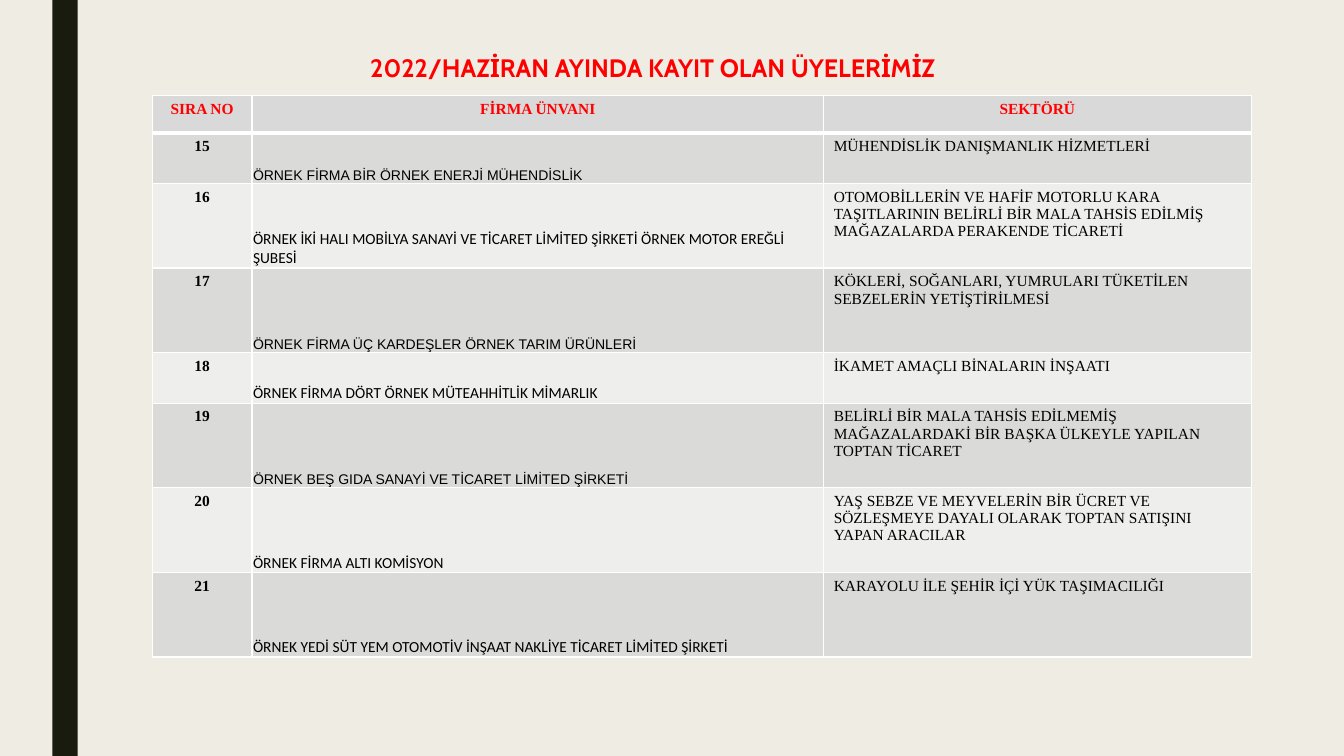
from dataclasses import dataclass

from lxml.etree import SubElement
from pptx import Presentation
from pptx.dml.color import RGBColor
from pptx.enum.shapes import MSO_SHAPE as Shape
from pptx.enum.text import MSO_ANCHOR as Anchor, PP_ALIGN as Align
from pptx.oxml.ns import qn
from pptx.util import Inches, Pt


@dataclass(frozen=True)
class Theme:
    background: str = "EFEDE3"
    stripe: str = "191B0E"
    accent: str = "FF0000"
    ink: str = "000000"
    border: str = "FFFFFF"
    header_fill: str = "D9D9D9"
    bands: tuple = ("DADBD9", "EEEEED")
    title_font: str = "Cabin"
    table_font: str = "Times New Roman"
    title_size: float = 18
    table_size: float = 11
    arial_size: float = 10


THEME = Theme()
TITLE = "2022/HAZİRAN AYINDA KAYIT OLAN ÜYELERİMİZ"
HEADINGS = ("SIRA NO", "FİRMA ÜNVANI", "SEKTÖRÜ")
FIRST_NUMBER = 15
COLUMN_WIDTHS = (0.99, 5.67, 4.24)
HEADER_HEIGHT, SHORT_ROW, TALL_ROW = 0.37, 0.5, 0.84
ARIAL = ("Arial", THEME.arial_size)
CALIBRI = ("Calibri", THEME.table_size)
MEMBERS = (
    ("ÖRNEK FİRMA BİR ÖRNEK ENERJİ MÜHENDİSLİK", ARIAL, SHORT_ROW,
     "MÜHENDİSLİK DANIŞMANLIK HİZMETLERİ"),
    ("ÖRNEK İKİ HALI MOBİLYA SANAYİ VE TİCARET LİMİTED ŞİRKETİ ÖRNEK MOTOR EREĞLİ ŞUBESİ",
     CALIBRI, TALL_ROW,
     "OTOMOBİLLERİN VE HAFİF MOTORLU KARA TAŞITLARININ BELİRLİ BİR MALA TAHSİS EDİLMİŞ "
     "MAĞAZALARDA PERAKENDE TİCARETİ"),
    ("ÖRNEK FİRMA ÜÇ KARDEŞLER ÖRNEK TARIM ÜRÜNLERİ", ARIAL, TALL_ROW,
     "KÖKLERİ, SOĞANLARI, YUMRULARI TÜKETİLEN SEBZELERİN YETİŞTİRİLMESİ"),
    ("ÖRNEK FİRMA DÖRT ÖRNEK MÜTEAHHİTLİK MİMARLIK", CALIBRI, SHORT_ROW,
     "İKAMET AMAÇLI BİNALARIN İNŞAATI"),
    ("ÖRNEK BEŞ GIDA SANAYİ VE TİCARET LİMİTED ŞİRKETİ", ARIAL, TALL_ROW,
     "BELİRLİ BİR MALA TAHSİS EDİLMEMİŞ MAĞAZALARDAKİ BİR BAŞKA ÜLKEYLE YAPILAN "
     "TOPTAN TİCARET"),
    ("ÖRNEK FİRMA ALTI KOMİSYON", CALIBRI, TALL_ROW,
     "YAŞ SEBZE VE MEYVELERİN BİR ÜCRET VE SÖZLEŞMEYE DAYALI OLARAK TOPTAN SATIŞINI "
     "YAPAN ARACILAR"),
    ("ÖRNEK YEDİ SÜT YEM OTOMOTİV İNŞAAT NAKLİYE TİCARET LİMİTED ŞİRKETİ", CALIBRI, TALL_ROW,
     "KARAYOLU İLE ŞEHİR İÇİ YÜK TAŞIMACILIĞI"),
)


def add_run(paragraph, text, font, size, color=THEME.ink, bold=False, align=Align.LEFT):
    """Add one formatted run and align its paragraph."""
    paragraph.alignment = align
    run = paragraph.add_run()
    run.text = text
    run.font.name = font
    run.font.size = Pt(size)
    run.font.bold = bold
    run.font.color.rgb = RGBColor.from_string(color)


def set_borders(cell, top=1, bottom=1):
    """Outline a cell, with widths in points."""
    properties = cell._tc.get_or_add_tcPr()
    for side, width in (("lnL", 1), ("lnR", 1), ("lnT", top), ("lnB", bottom)):
        line = SubElement(properties, qn(f"a:{side}"), w=str(Pt(width)))
        fill = SubElement(line, qn("a:solidFill"))
        SubElement(fill, qn("a:srgbClr"), val=THEME.border)


def style_cell(cell, fill, top=1, bottom=1):
    """Give a cell its borders and fill, and return its paragraph."""
    set_borders(cell, top, bottom)
    cell.fill.solid()
    cell.fill.fore_color.rgb = RGBColor.from_string(fill)
    return cell.text_frame.paragraphs[0]


def add_stripe(slide, height):
    """Draw the dark vertical stripe at the left."""
    stripe = slide.shapes.add_shape(Shape.RECTANGLE, Inches(0.52), 0, Inches(0.25), height)
    stripe.shadow.inherit = False
    stripe.fill.solid()
    stripe.fill.fore_color.rgb = RGBColor.from_string(THEME.stripe)
    stripe.line.fill.background()


def set_title(slide):
    """Place and fill the title placeholder."""
    title = slide.shapes.title
    title.left, title.top = Inches(3.4), Inches(0.47)
    title.width, title.height = Inches(6.15), Inches(0.4)
    frame = title.text_frame
    frame.word_wrap = True
    frame.vertical_anchor = Anchor.TOP
    add_run(frame.paragraphs[0], TITLE, THEME.title_font, THEME.title_size,
            THEME.accent, True, Align.CENTER)


def fill_member_row(table, index, member):
    """Write one member's number, firm and sector."""
    firm, (firm_font, firm_size), height, sector = member
    table.rows[index].height = Inches(height)
    band = THEME.bands[(index - 1) % 2]
    cells = [table.cell(index, column) for column in range(len(HEADINGS))]
    number_text, firm_text, sector_text = [
        style_cell(cell, band, top=3 if index == 1 else 1) for cell in cells]
    add_run(number_text, str(FIRST_NUMBER + index - 1), THEME.table_font,
            THEME.table_size, bold=True, align=Align.CENTER)
    add_run(firm_text, firm, firm_font, firm_size)
    add_run(sector_text, sector, THEME.table_font, THEME.table_size)
    firm_cell = cells[1]
    firm_cell.vertical_anchor = Anchor.BOTTOM
    firm_cell.margin_left = firm_cell.margin_right = firm_cell.margin_top = Inches(0.01)
    firm_cell.margin_bottom = 0


def add_member_table(slide):
    """Build the table of new members."""
    height = HEADER_HEIGHT + sum(member[2] for member in MEMBERS)
    table = slide.shapes.add_table(
        len(MEMBERS) + 1, len(HEADINGS), Inches(1.51), Inches(0.95),
        Inches(sum(COLUMN_WIDTHS)), Inches(height)).table
    table.rows[0].height = Inches(HEADER_HEIGHT)
    for column, (heading, width) in enumerate(zip(HEADINGS, COLUMN_WIDTHS)):
        table.columns[column].width = Inches(width)
        paragraph = style_cell(table.cell(0, column), THEME.header_fill, bottom=3)
        add_run(paragraph, heading, THEME.table_font, THEME.table_size,
                THEME.accent, True, Align.CENTER)
    for index, member in enumerate(MEMBERS, start=1):
        fill_member_row(table, index, member)


def main():
    """Build and save the slide."""
    deck = Presentation()
    deck.slide_width, deck.slide_height = Inches(13.33), Inches(7.5)
    slide = deck.slides.add_slide(deck.slide_layouts.get_by_name("Title Only"))
    slide.background.fill.solid()
    slide.background.fill.fore_color.rgb = RGBColor.from_string(THEME.background)
    add_stripe(slide, deck.slide_height)
    add_member_table(slide)
    set_title(slide)
    deck.save("out.pptx")


if __name__ == "__main__":
    main()
